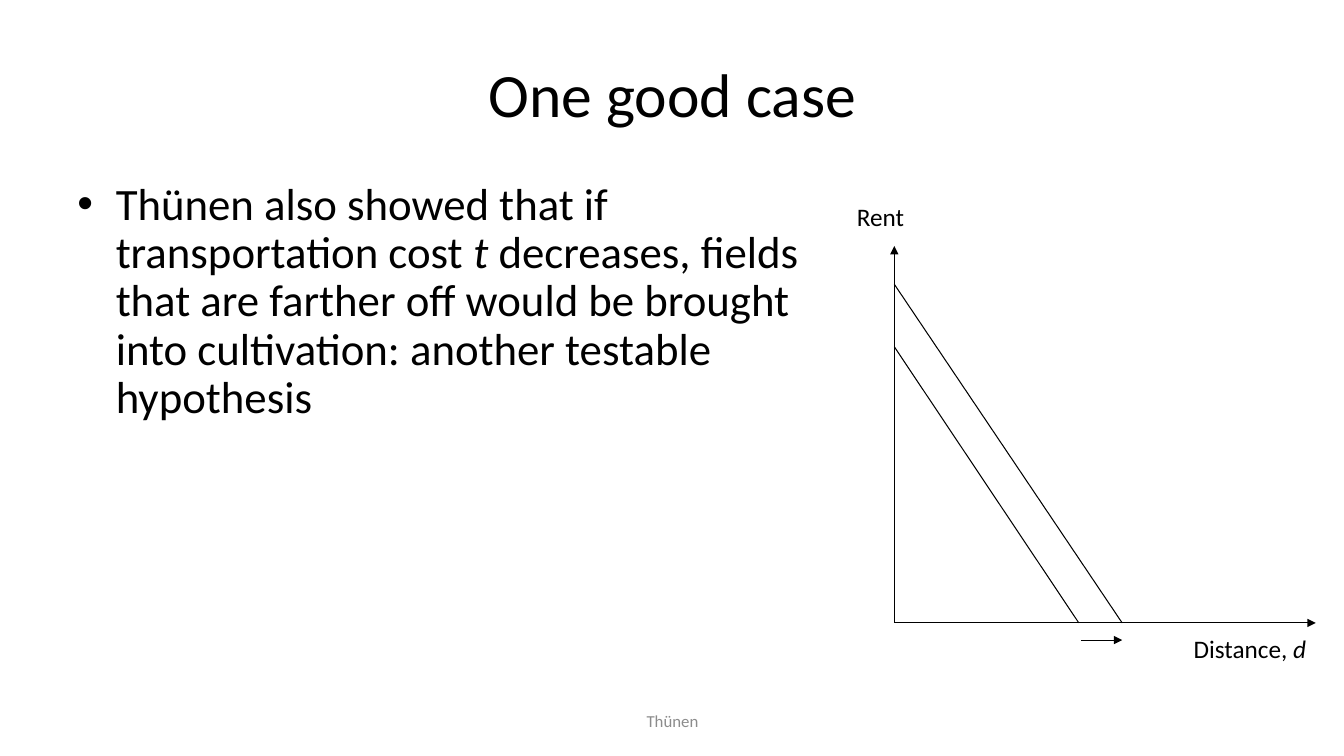
"""Build the slide on falling transport cost and the rent-distance diagram."""
from lxml import etree
from pptx import Presentation
from pptx.dml.color import RGBColor
from pptx.enum.shapes import MSO_CONNECTOR
from pptx.enum.text import MSO_ANCHOR, PP_ALIGN
from pptx.oxml.ns import qn
from pptx.util import Pt

PX = 9144
LEFT, CENTER = PP_ALIGN.LEFT, PP_ALIGN.CENTER
TOP, MIDDLE = MSO_ANCHOR.TOP, MSO_ANCHOR.MIDDLE
STRAIGHT = MSO_CONNECTOR.STRAIGHT
BLACK, GRAY = "000000", "8C8C8C"


def add_text(box, runs, size, color=BLACK, align=LEFT, anchor=TOP, wrap=True):
    frame = slide.shapes.add_textbox(*(n * PX for n in box)).text_frame
    frame.word_wrap = wrap
    frame.vertical_anchor = anchor
    paragraph = frame.paragraphs[0]
    paragraph.alignment = align
    paragraph.font.name = "Calibri"
    paragraph.font.size = Pt(size)
    paragraph.font.color.rgb = RGBColor.from_string(color)
    for words, italic in runs:
        run = paragraph.add_run()
        run.text = words
        if italic:
            run.font.italic = True
    return paragraph


def add_line(start, end, arrow=False):
    line = slide.shapes.add_connector(STRAIGHT, *(n * PX for n in start + end))
    line.line.width = Pt(0.75)
    line.line.color.rgb = RGBColor.from_string(BLACK)
    if arrow:
        etree.SubElement(line.line._get_or_add_ln(), qn("a:tailEnd"), type="triangle")
    etree.SubElement(line._element.spPr, qn("a:effectLst"))


prs = Presentation()
prs.slide_width, prs.slide_height = 1333 * PX, 750 * PX
slide = prs.slides.add_slide(prs.slide_layouts[6])

add_text((67, 30, 1200, 125), [("One good case", False)], 44, align=CENTER, anchor=MIDDLE)

hypothesis = add_text((67, 175, 773, 495), [
    ("Thünen also showed that if transportation cost ", False),
    ("t", True),
    (" decreases, fields that are farther off would be brought into cultivation: "
     "another testable hypothesis", False),
], 32)
hypothesis.line_spacing = 0.9
indents = hypothesis._p.get_or_add_pPr()
indents.set("marL", str(38 * PX))
indents.set("indent", str(-38 * PX))
bullet_font = etree.Element(qn("a:buFont"), typeface="Arial")
bullet = etree.Element(qn("a:buChar"), char="•")
indents.find(qn("a:lnSpc")).addnext(bullet_font)
bullet_font.addnext(bullet)

add_text((456, 695, 422, 40), [("Thünen", False)], 12, GRAY, CENTER, MIDDLE)

origin_x, origin_y = 887, 618
old_limit, new_limit = 1070, 1113
add_line((origin_x, origin_y), (1305, origin_y), arrow=True)
add_line((origin_x, origin_y), (origin_x, 244), arrow=True)
for rent, limit in ((344, old_limit), (282, new_limit)):
    add_line((origin_x, rent), (limit, origin_y))
add_line((old_limit + 2, 635), (new_limit, 635), arrow=True)

add_text((1174, 623, 151, 40), [("Distance, ", False), ("d", True)], 18, wrap=False)
add_text((840, 195, 83, 40), [("Rent", False)], 18, wrap=False)

prs.save("out.pptx")
